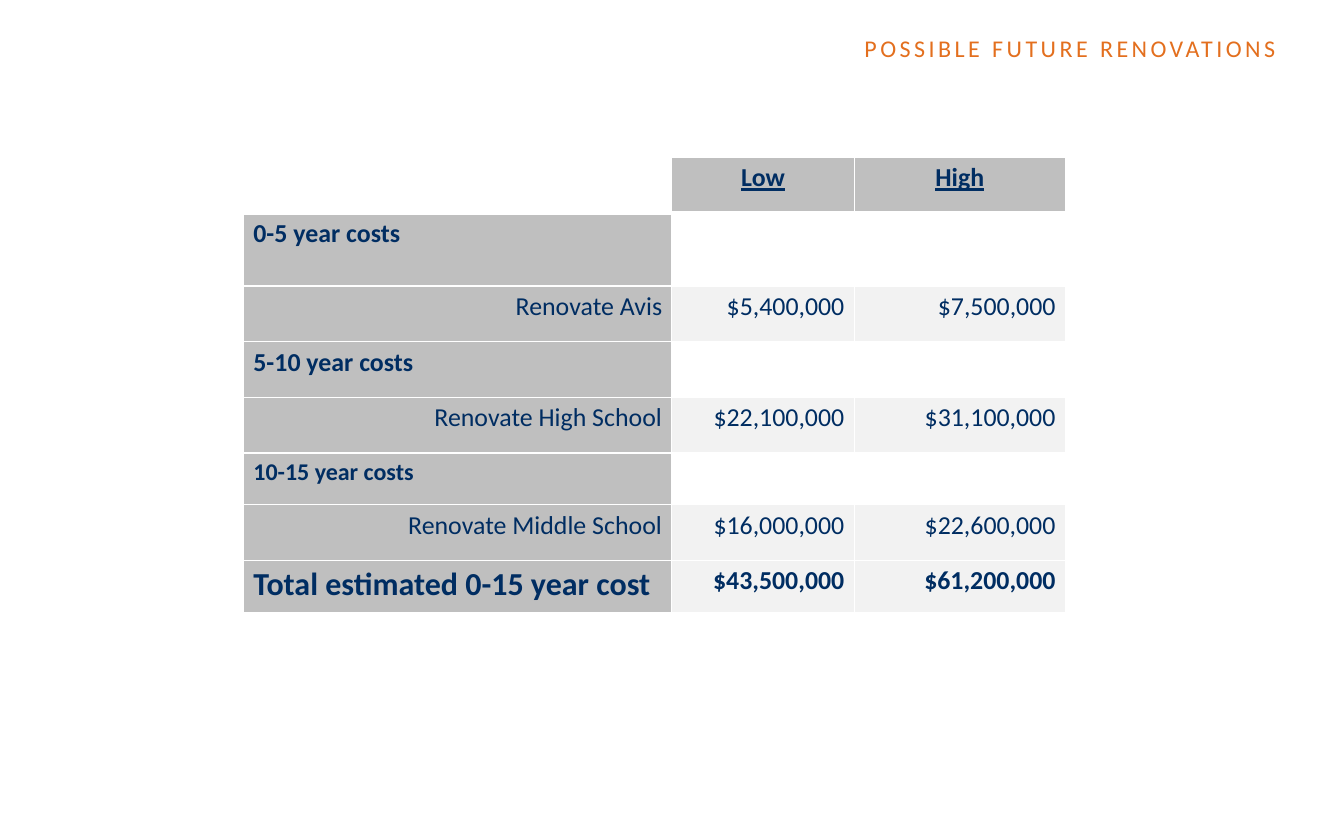
from lxml import etree
from pptx import Presentation
from pptx import util as u
from pptx.dml import color
from pptx.enum import text
from pptx.oxml import ns

WIDE, HIGH = u.Inches(14), u.Inches(8.5)
NAVY, RUST, GREY, PALE, WHITE = "002D62", "E36F1E", "BFBFBF", "F2F2F2", "FFFFFF"
LEFT, MID, RIGHT = text.PP_ALIGN.LEFT, text.PP_ALIGN.CENTER, text.PP_ALIGN.RIGHT
COLS = 4.46, 1.9, 2.2
ROWS = 0.58, 0.76, 0.58, 0.58, 0.58, 0.54, 0.58, 0.54
COSTS = [
    ("", "Low", "High"),
    ("0-5 year costs", "", ""),
    ("Renovate Avis", "$5,400,000", "$7,500,000"),
    ("5-10 year costs", "", ""),
    ("Renovate High School", "$22,100,000", "$31,100,000"),
    ("10-15 year costs", "", ""),
    ("Renovate Middle School", "$16,000,000", "$22,600,000"),
    ("Total estimated 0-15 year cost", "$43,500,000", "$61,200,000"),
]
SIZES = {(5, 0): 18, (7, 0): 24}


def hue(code):
    return color.RGBColor.from_string(code)


def share(left, top, width, height):
    pairs = zip((left, top, width, height), (WIDE, HIGH) * 2)
    return [round(part * whole / 100) for part, whole in pairs]


def apply(item, **form):
    for name, value in form.items():
        setattr(item, name, value)


def style(para, tint, **form):
    apply(para.font, name="Calibri", **form)
    para.font.color.rgb = hue(tint)


def edge(cell, side, points):
    props = cell._tc.get_or_add_tcPr()
    line = etree.SubElement(props, ns.qn(f"a:ln{side}"), w=str(u.Pt(points)))
    fill = etree.SubElement(line, ns.qn("a:solidFill"))
    etree.SubElement(fill, ns.qn("a:srgbClr"), val=WHITE)


def head(slide, box):
    title = slide.shapes.title
    apply(title, **dict(zip(("left", "top", "width", "height"), box)))
    frame = title.text_frame
    apply(frame, word_wrap=True, auto_size=text.MSO_AUTO_SIZE.NONE,
          vertical_anchor=text.MSO_ANCHOR.MIDDLE, margin_right=u.Inches(0.24))
    frame.text = "POSSIBLE FUTURE RENOVATIONS"
    para = frame.paragraphs[0]
    apply(para, alignment=RIGHT, line_spacing=0.9)
    style(para, RUST, size=u.Pt(18), bold=False)
    para.runs[0].font._element.set("spc", "260")


def paint(cell, row, col, words):
    for side in "LRTB":
        thick = (row, side) in ((0, "B"), (1, "T"))
        edge(cell, side, 3 if thick else 1)
    blank = not words
    tint = WHITE if blank else GREY if row == 0 or col == 0 else PALE
    cell.fill.solid()
    cell.fill.fore_color.rgb = hue(tint)
    group = row % 2 == 1
    cell.text = words
    para = cell.text_frame.paragraphs[0]
    para.alignment = MID if row == 0 else LEFT if group and col == 0 else RIGHT
    style(para, NAVY, size=u.Pt(SIZES.get((row, col), 19.4)),
          bold=row == 0 or group, underline=row == 0)


def grid(slide, box):
    table = slide.shapes.add_table(len(ROWS), len(COLS), *box).table
    apply(table, first_row=False, horz_banding=False)
    for col, part in zip(table.columns, COLS):
        col.width = round(box[2] * part / sum(COLS))
    for row, part in zip(table.rows, ROWS):
        row.height = round(box[3] * part / sum(ROWS))
    for row, line in enumerate(COSTS):
        for col, words in enumerate(line):
            paint(table.cell(row, col), row, col, words)


def main():
    deck = Presentation()
    apply(deck, slide_width=WIDE, slide_height=HIGH)
    slide = deck.slides.add_slide(deck.slide_layouts[5])
    head(slide, share(37.21, 3.53, 59.43, 5.06))
    grid(slide, share(18.14, 19.29, 61.14, 55.76))
    deck.save("out.pptx")


if __name__ == "__main__":
    main()
